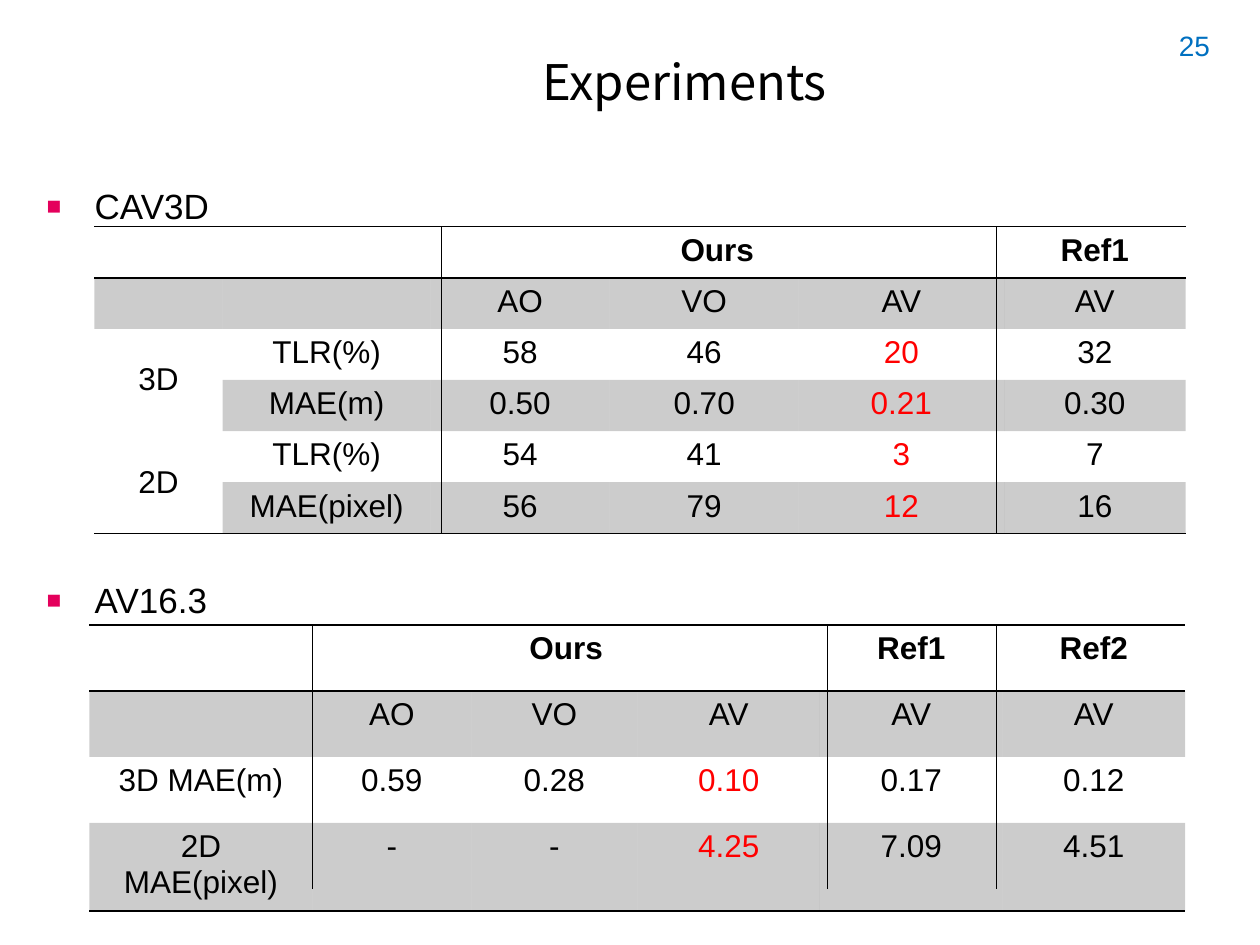
from lxml import etree
from pptx import Presentation
from pptx.dml.color import RGBColor
from pptx.enum.shapes import MSO_CONNECTOR
from pptx.enum.text import MSO_ANCHOR, PP_ALIGN
from pptx.oxml import parse_xml
from pptx.oxml.ns import nsdecls, qn
from pptx.util import Cm, Pt

CENTER, RIGHT = PP_ALIGN.CENTER, PP_ALIGN.RIGHT
TOP, MIDDLE = MSO_ANCHOR.TOP, MSO_ANCHOR.MIDDLE
STRAIGHT = MSO_CONNECTOR.STRAIGHT
PLAIN_TABLE_STYLE = "{2D5ABB26-0587-4C30-8999-92F81FD0307C}"

THEME = {
    "ink": "000000",
    "best": "FF0000",
    "bullet": "E4005C",
    "shade_percent": 20,
    "rule": 1,
    "divider": 0.5,
    "title": {"name": "Noto Sans CJK JP", "size": Pt(28), "color": "000000"},
    "heading": {"name": "Arial", "size": Pt(20), "color": "000000"},
    "number": {"name": "Arial", "size": Pt(16), "color": "0070C0"},
    "cell": {"name": "Arial", "size": Pt(18), "color": "000000"},
}

TITLE = "Experiments "
PAGE_NUMBER = "25"
HEADINGS = [("CAV3D", 0), ("AV16.3", 201)]  # text, space before in points

TABLES = [
    {
        "left": 1.9, "top": 4.57, "row_height": 1.03,
        "columns": [2.59, 4.19, 3.61, 3.81, 4.14, 3.66],
        "dividers": [8.89, 20.09],
        "best_column": 4,
        "merges": [((0, 0), (0, 1)), ((0, 2), (0, 4)), ((2, 0), (3, 0)), ((4, 0), (5, 0))],
        "rows": [
            ["", "", "Ours", "", "", "Ref1"],
            ["", "", "AO", "VO", "AV", "AV"],
            ["3D", "TLR(%)", "58", "46", "20", "32"],
            ["", "MAE(m)", "0.50", "0.70", "0.21", "0.30"],
            ["2D", "TLR(%)", "54", "41", "3", "7"],
            ["", "MAE(pixel)", "56", "79", "12", "16"],
        ],
    },
    {
        "left": 1.8, "top": 12.6, "row_height": 1.33,
        "columns": [4.5, 3.2, 3.35, 3.68, 3.68, 3.68],
        "dividers": [6.3, 16.69, 20.09],
        "best_column": 3,
        "merges": [((0, 1), (0, 3))],
        "rows": [
            ["", "Ours", "", "", "Ref1", "Ref2"],
            ["", "AO", "VO", "AV", "AV", "AV"],
            ["3D MAE(m)", "0.59", "0.28", "0.10", "0.17", "0.12"],
            ["2D MAE(pixel)", "-", "-", "4.25", "7.09", "4.51"],
        ],
    },
]


def write(para, text, style, **changes):
    span = para.add_run()
    span.text = text
    for name, value in {**style, **changes}.items():
        if name == "color":
            span.font.color.rgb = RGBColor.from_string(value)
        else:
            setattr(span.font, name, value)


def add_bullet(para):
    properties = para._p.get_or_add_pPr()
    properties.set("marL", str(Cm(0.97)))
    properties.set("indent", str(-Cm(0.97)))
    for xml in (
        f'<a:buClr {nsdecls("a")}><a:srgbClr val="{THEME["bullet"]}"/></a:buClr>',
        f'<a:buSzPct {nsdecls("a")} val="70000"/>',
        f'<a:buFont {nsdecls("a")} typeface="Arial"/>',
        f'<a:buChar {nsdecls("a")} char="■"/>',
    ):
        properties.append(parse_xml(xml))


def add_text_box(page, left, top, width, height):
    frame = page.shapes.add_textbox(Cm(left), Cm(top), Cm(width), Cm(height)).text_frame
    frame.word_wrap = True
    return frame


def shade(cell):
    cell.fill.solid()
    cell.fill.fore_color.rgb = RGBColor.from_string(THEME["ink"])
    color = cell._tc.tcPr.find(f'{qn("a:solidFill")}/{qn("a:srgbClr")}')
    etree.SubElement(color, qn("a:alpha")).set("val", str(THEME["shade_percent"] * 1000))


def add_rules(cell, sides):
    """Draw cell borders; sides are tag names in schema order."""
    properties = cell._tc.get_or_add_tcPr()
    for index, side in enumerate(sides):
        properties.insert(index, parse_xml(
            f'<a:{side} {nsdecls("a")} w="{Pt(THEME["rule"])}"><a:solidFill>'
            f'<a:srgbClr val="{THEME["ink"]}"/></a:solidFill></a:{side}>'))


def format_cell(cell, text, row, column, data):
    if row % 2 and not cell.is_spanned:
        shade(cell)
    else:
        cell.fill.background()
    if row == 0:
        add_rules(cell, ["lnT", "lnB"])
    elif row + cell.span_height == len(data["rows"]):
        add_rules(cell, ["lnB"])
    cell.vertical_anchor = MIDDLE if cell.span_height > 1 else TOP
    para = cell.text_frame.paragraphs[0]
    para.alignment = CENTER
    para.font.size = THEME["cell"]["size"]
    if text:
        best = row > 1 and column == data["best_column"]
        write(para, text, THEME["cell"], bold=row == 0,
              color=THEME["best" if best else "ink"])


def add_result_table(page, data):
    rows, columns = data["rows"], data["columns"]
    height = data["row_height"] * len(rows)
    table = page.shapes.add_table(
        len(rows), len(columns), Cm(data["left"]), Cm(data["top"]),
        Cm(sum(columns)), Cm(height)).table
    table._tbl.tblPr.find(qn("a:tableStyleId")).text = PLAIN_TABLE_STYLE
    table.first_row = table.horz_banding = False
    for column, width in zip(table.columns, columns):
        column.width = Cm(width)
    for row in table.rows:
        row.height = Cm(data["row_height"])
    for first, last in data["merges"]:
        table.cell(*first).merge(table.cell(*last))
    for r, texts in enumerate(rows):
        for c, text in enumerate(texts):
            format_cell(table.cell(r, c), text, r, c, data)
    for x in data["dividers"]:
        line = page.shapes.add_connector(
            STRAIGHT, Cm(x), Cm(data["top"]), Cm(x), Cm(data["top"] + height))
        line.line.color.rgb = RGBColor.from_string(THEME["ink"])
        line.line.width = Pt(THEME["divider"])
        etree.SubElement(line._element.spPr, qn("a:effectLst"))


def main():
    deck = Presentation()
    deck.slide_width, deck.slide_height = Cm(25.4), Cm(19.05)
    page = deck.slides.add_slide(deck.slide_layouts[5])

    title = page.shapes.title
    place = {"left": 3.1, "top": 0.53, "width": 21.62, "height": 2.21}
    for name, value in place.items():
        setattr(title, name, Cm(value))
    title.text_frame.vertical_anchor = MIDDLE
    para = title.text_frame.paragraphs[0]
    para.alignment = CENTER
    write(para, TITLE, THEME["title"])

    frame = add_text_box(page, 0.69, 3.6, 24, 14.6)
    for index, (text, gap) in enumerate(HEADINGS):
        para = frame.add_paragraph() if index else frame.paragraphs[0]
        add_bullet(para)
        para.space_before = Pt(gap)
        write(para, text, THEME["heading"])

    frame = add_text_box(page, 18.92, 0.41, 5.72, 1.02)
    frame.vertical_anchor = MIDDLE
    frame.paragraphs[0].alignment = RIGHT
    write(frame.paragraphs[0], PAGE_NUMBER, THEME["number"])

    for data in TABLES:
        add_result_table(page, data)
    deck.save("out.pptx")


if __name__ == "__main__":
    main()
